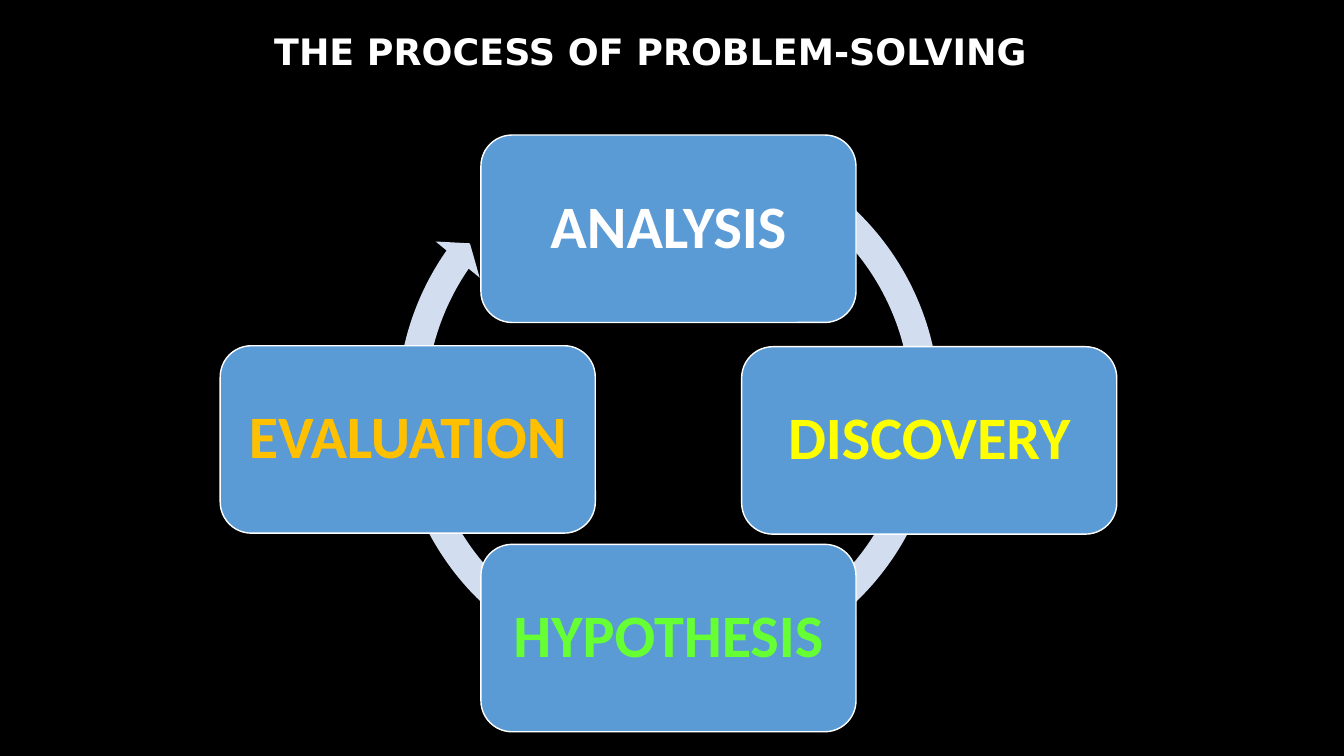
from pptx import Presentation
from pptx.dml.color import RGBColor
from pptx.enum.shapes import MSO_SHAPE
from pptx.enum.text import MSO_ANCHOR, MSO_AUTO_SIZE, PP_ALIGN
from pptx.util import Inches, Pt

COLORS = {
    "background": "000000",
    "ring": "D2DEEF",
    "step": "5B9BD5",
    "white": "FFFFFF",
    "yellow": "FFFF00",
    "green": "66FF33",
    "orange": "FFC000",
}
WIDTH, HEIGHT = Inches(13.33), Inches(7.5)

# Label, colour, and centre measured from the ring's centre in % of the slide
STEPS = [
    ("ANALYSIS", "white", 0, -23.47),
    ("DISCOVERY", "yellow", 19.4, 4.53),
    ("HYPOTHESIS", "green", 0, 30.67),
    ("EVALUATION", "orange", -19.4, 4.4),
]
STEP_SIZE = (27.91, 24.8)
RING_ADJUSTMENTS = (0.05, 2.73, 128.89, 179.92, 0.05)


def across(percent):
    return round(WIDTH * percent / 100)


def down(percent):
    return round(HEIGHT * percent / 100)


def color(name):
    return RGBColor.from_string(COLORS[name])


def add_text(frame, text, font, size, color_name, align):
    para = frame.paragraphs[0]
    para.alignment = align
    span = para.add_run()
    span.text = text
    span.font.name = font
    span.font.size = Pt(size)
    span.font.bold = True
    span.font.color.rgb = color(color_name)
    return para


def add_filled(page, kind, box, fill_name):
    shape = page.shapes.add_shape(kind, *box)
    shape.shadow.inherit = False
    shape.fill.solid()
    shape.fill.fore_color.rgb = color(fill_name)
    return shape


def add_title(page, box):
    title = page.shapes.title
    title.left, title.top, title.width, title.height = box
    frame = title.text_frame
    frame.auto_size = MSO_AUTO_SIZE.NONE
    frame.vertical_anchor = MSO_ANCHOR.MIDDLE
    add_text(frame, "THE PROCESS OF PROBLEM-SOLVING", "DejaVu Sans", 26,
             "white", PP_ALIGN.LEFT)


def add_step(page, box, label, color_name):
    step = add_filled(page, MSO_SHAPE.ROUNDED_RECTANGLE, box, "step")
    step.line.color.rgb = color("white")
    step.line.width = Pt(1)
    frame = step.text_frame
    frame.word_wrap = True
    frame.vertical_anchor = MSO_ANCHOR.MIDDLE
    frame.margin_left = frame.margin_right = Inches(0.18)
    frame.margin_top = frame.margin_bottom = Inches(0.18)
    para = add_text(frame, label, "Calibri", 43, color_name, PP_ALIGN.CENTER)
    para.line_spacing = 0.9


def add_cycle(page, box):
    """Draw the circular arrow in the box and the steps around its centre."""
    left, top, width, height = box
    ring = add_filled(page, MSO_SHAPE.CIRCULAR_ARROW, box, "ring")
    ring.line.fill.background()
    for index, value in enumerate(RING_ADJUSTMENTS):
        ring.adjustments[index] = value

    step_width, step_height = across(STEP_SIZE[0]), down(STEP_SIZE[1])
    first_left = left + (width - step_width) // 2
    first_top = top + (height - step_height) // 2
    for label, color_name, right_by, down_by in STEPS:
        step_box = (first_left + across(right_by), first_top + down(down_by),
                    step_width, step_height)
        add_step(page, step_box, label, color_name)


def main():
    deck = Presentation()
    deck.slide_width, deck.slide_height = WIDTH, HEIGHT
    page = deck.slides.add_slide(deck.slide_layouts[5])
    page.background.fill.solid()
    page.background.fill.fore_color.rgb = color("background")
    ring_side = across(42.46)
    add_cycle(page, (across(28.51), down(16), ring_side, ring_side))
    add_title(page, (across(19.65), down(3.07), across(60.17), down(7.2)))
    deck.save("out.pptx")


if __name__ == "__main__":
    main()
